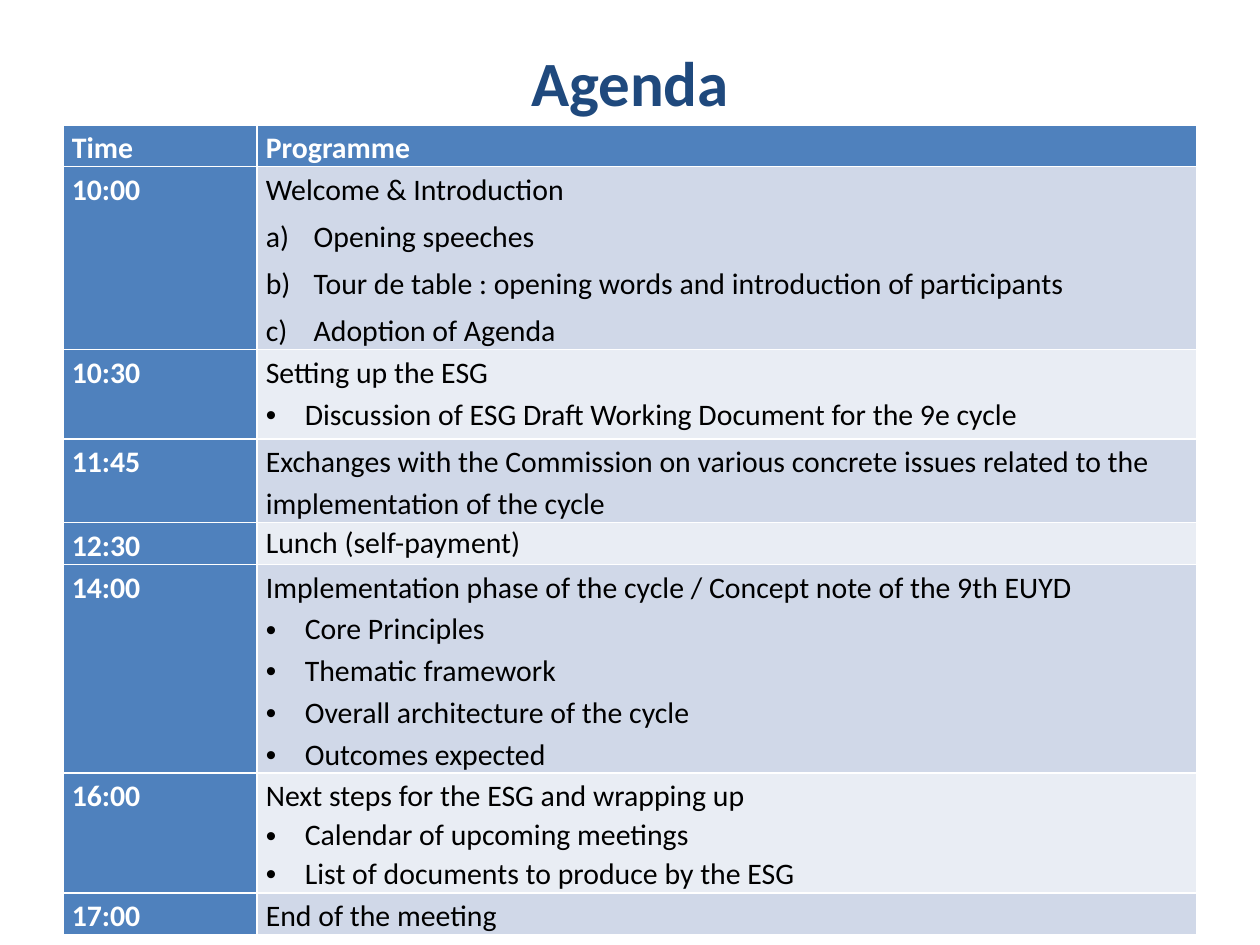
from dataclasses import dataclass

from lxml import etree
from pptx import Presentation
from pptx.dml.color import RGBColor
from pptx.enum.text import MSO_ANCHOR, PP_ALIGN
from pptx.oxml.ns import qn
from pptx.util import Inches, Pt

MIDDLE = MSO_ANCHOR.MIDDLE
CENTER = PP_ALIGN.CENTER
TITLE_ONLY = 5


@dataclass(frozen=True)
class Theme:
    font: str = "Calibri"
    title_size: int = 36
    body_size: int = 17
    title: str = "1F497D"
    accent: str = "4F81BD"
    bands: tuple = ("D0D8E8", "E9EDF4")
    light: str = "FFFFFF"
    dark: str = "000000"


@dataclass(frozen=True)
class Session:
    time: str
    topic: str
    height: float
    items: tuple = ()
    lettered: bool = False
    topic_spacing: float = 1.15
    item_spacing: float = 1.15
    space_after: int = 0


THEME = Theme()
COLUMN_WIDTHS = (1.54, 7.46)
HEADER_HEIGHT = 0.25
SESSIONS = (
    Session("10:00", "Welcome & Introduction", 1.21,
            ("Opening speeches",
             "Tour de table : opening words and introduction of participants",
             "Adoption of Agenda"), lettered=True, space_after=3),
    Session("10:30", "Setting up the ESG", 0.71,
            ("Discussion of ESG Draft Working Document for the 9e cycle",)),
    Session("11:45", "Exchanges with the Commission on various concrete issues "
            "related to the implementation of the cycle", 0.52, space_after=3),
    Session("12:30", "Lunch (self-payment)", 0.25, topic_spacing=1.07),
    Session("14:00", "Implementation phase of the cycle / Concept note of the 9th EUYD", 1.58,
            ("Core Principles", "Thematic framework",
             "Overall architecture of the cycle", "Outcomes expected")),
    Session("16:00", "Next steps for the ESG and wrapping up", 0.75,
            ("Calendar of upcoming meetings",
             "List of documents to produce by the ESG"), item_spacing=1.07),
    Session("17:00", "End of the meeting", 0.25),
)


def style_font(para, size, color, bold):
    para.font.name = THEME.font
    para.font.size = Pt(size)
    para.font.bold = bold
    para.font.color.rgb = RGBColor.from_string(color)


def write_line(para, text, color, bold=False, spacing=1.15, after=3):
    para.text = text
    para.line_spacing = spacing
    para.space_after = Pt(after)
    style_font(para, THEME.body_size, color, bold)


def add_marker(para, lettered):
    indent = Inches(0.38 if lettered else 0.31)
    properties = para._p.get_or_add_pPr()
    properties.set("marL", str(indent))
    properties.set("indent", str(-indent))
    if lettered:
        marker = etree.Element(qn("a:buAutoNum"), type="alphaLcParenR")
    else:
        typeface = etree.Element(qn("a:buFont"), typeface="Arial")
        properties.find(qn("a:defRPr")).addprevious(typeface)
        marker = etree.Element(qn("a:buChar"), char="•")
    properties.find(qn("a:defRPr")).addprevious(marker)


def prepare_cell(cell, fill):
    cell.margin_left = cell.margin_right = Inches(0.07)
    cell.margin_top = cell.margin_bottom = 0
    cell.fill.solid()
    cell.fill.fore_color.rgb = RGBColor.from_string(fill)


def fill_heading(cell, text):
    prepare_cell(cell, THEME.accent)
    write_line(cell.text_frame.paragraphs[0], text, THEME.light, bold=True)


def fill_programme(cell, session, fill):
    prepare_cell(cell, fill)
    frame = cell.text_frame
    write_line(frame.paragraphs[0], session.topic, THEME.dark,
               spacing=session.topic_spacing, after=session.space_after)
    for item in session.items:
        para = frame.add_paragraph()
        write_line(para, item, THEME.dark,
                   spacing=session.item_spacing, after=session.space_after)
        add_marker(para, session.lettered)


def set_title(slide, text):
    title = slide.shapes.title
    title.left, title.top = Inches(0.5), Inches(0.3)
    title.width, title.height = Inches(9), Inches(0.69)
    title.text_frame.vertical_anchor = MIDDLE
    para = title.text_frame.paragraphs[0]
    para.text = text
    para.alignment = CENTER
    style_font(para, THEME.title_size, THEME.title, True)


def add_agenda(slide):
    heights = [HEADER_HEIGHT] + [session.height for session in SESSIONS]
    table = slide.shapes.add_table(
        len(heights), len(COLUMN_WIDTHS), Inches(0.5), Inches(0.99),
        Inches(sum(COLUMN_WIDTHS)), Inches(sum(heights))).table
    table.first_col = True
    for column, width in zip(table.columns, COLUMN_WIDTHS):
        column.width = Inches(width)
    for row, height in zip(table.rows, heights):
        row.height = Inches(height)
    for index, heading in enumerate(("Time", "Programme")):
        fill_heading(table.cell(0, index), heading)
    for index, session in enumerate(SESSIONS):
        fill_heading(table.cell(index + 1, 0), session.time)
        fill_programme(table.cell(index + 1, 1), session, THEME.bands[index % 2])


def main():
    deck = Presentation()
    deck.slide_width, deck.slide_height = Inches(10), Inches(7.5)
    slide = deck.slides.add_slide(deck.slide_layouts[TITLE_ONLY])
    set_title(slide, "Agenda")
    add_agenda(slide)
    deck.save("out.pptx")


if __name__ == "__main__":
    main()
